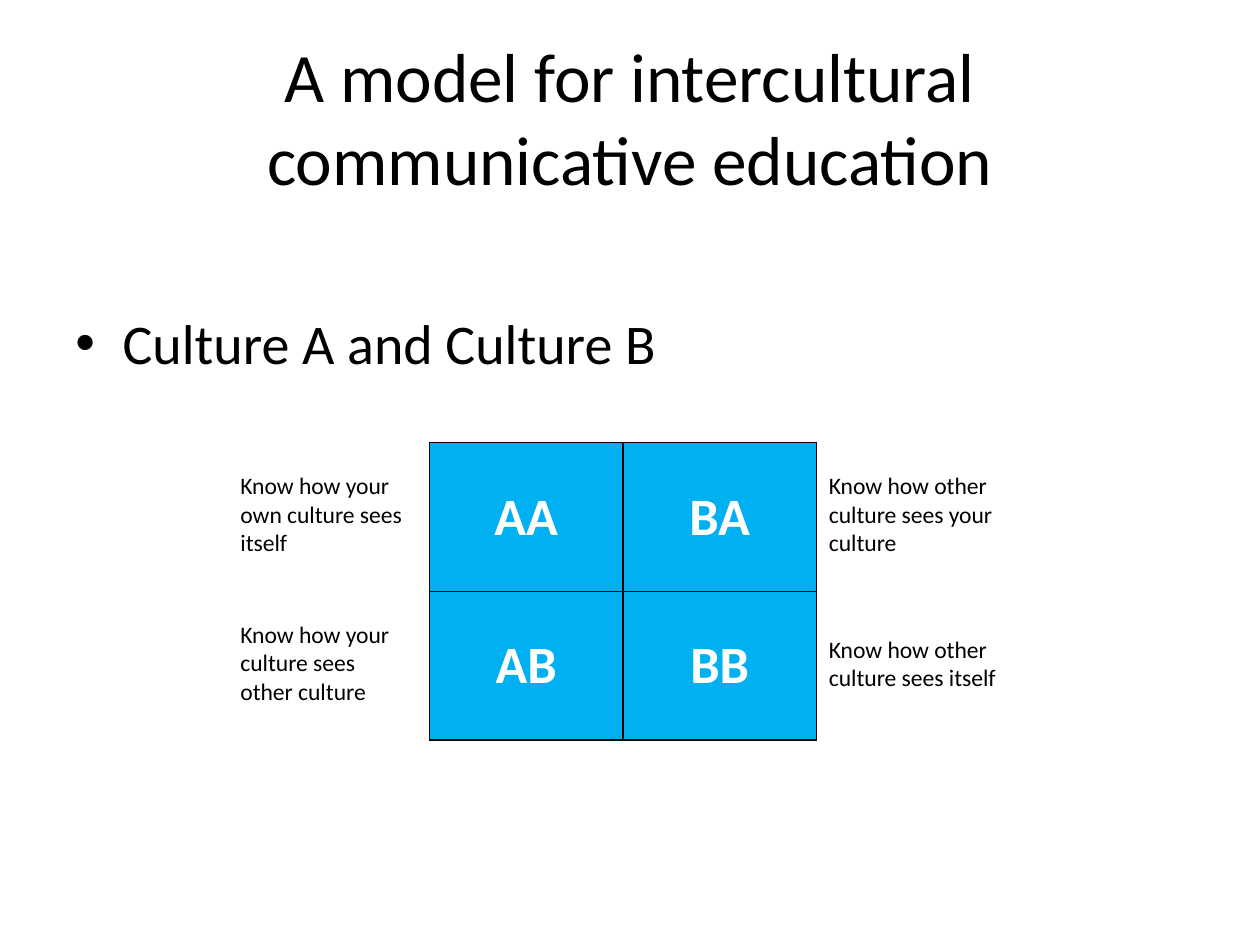
from typing import NamedTuple

from lxml.etree import SubElement
from pptx import Presentation
from pptx.dml.color import RGBColor
from pptx.enum.text import MSO_ANCHOR as Anchor, MSO_AUTO_SIZE as AutoSize, PP_ALIGN as Align
from pptx.oxml.ns import qn
from pptx.util import Pt

BLACK, WHITE, BLUE = "000000", "FFFFFF", "00B0F0"
GRID_LEFT, GRID_TOP = 245.4, 253
CELL_WIDTH, CELL_HEIGHT = 110.6, 85
CAPTION_WIDTH, CAPTION_LINE = 112.3, 16.4
CAPTION_LEFTS = (130.3, GRID_LEFT + 2 * CELL_WIDTH)


class Quadrant(NamedTuple):
    row: int
    column: int
    code: str
    caption: str
    lines: int


QUADRANTS = [
    Quadrant(0, 0, "AA", "Know how your own culture sees itself", 3),
    Quadrant(0, 1, "BA", "Know how other culture sees your culture", 3),
    Quadrant(1, 0, "AB", "Know how your culture sees other culture", 3),
    Quadrant(1, 1, "BB", "Know how other culture sees itself", 2),
]


def color(value: str) -> RGBColor:
    return RGBColor.from_string(value)


def write(frame, text: str, size: float, ink: str = BLACK, bold: bool = False, align=Align.LEFT):
    para = frame.paragraphs[0]
    para.alignment = align
    span = para.add_run()
    span.text = text
    for name, value in {"name": "Calibri", "size": Pt(size), "bold": bold}.items():
        setattr(span.font, name, value)
    span.font.color.rgb = color(ink)
    return para


def place(shape, left: float, top: float, width: float, height: float) -> None:
    bounds = {"left": left, "top": top, "width": width, "height": height}
    for name, value in bounds.items():
        setattr(shape, name, Pt(value))


def add_text_box(page, left: float, top: float, width: float, height: float):
    box = page.shapes.add_textbox(Pt(left), Pt(top), Pt(width), Pt(height))
    box.text_frame.word_wrap = True
    return box.text_frame


def add_title(page, text: str) -> None:
    title = page.shapes.title
    place(title, 36, 21.6, 648, 90)
    frame = title.text_frame
    frame.auto_size = AutoSize.NONE
    frame.vertical_anchor = Anchor.MIDDLE
    write(frame, text, 39.6, align=Align.CENTER)


def add_bullet(page, text: str) -> None:
    frame = add_text_box(page, 36, 126, 648, 356.4)
    frame.margin_top = Pt(50.4)
    properties = write(frame, text, 32)._p.get_or_add_pPr()
    properties.set("marL", str(Pt(27)))
    properties.set("indent", str(-Pt(27)))
    SubElement(properties, qn("a:buFont"), typeface="Arial")
    SubElement(properties, qn("a:buChar"), char="•")


def format_cell(cell, code: str) -> None:
    properties = cell._tc.get_or_add_tcPr()
    for side in ("lnL", "lnR", "lnT", "lnB"):
        line = SubElement(properties, qn(f"a:{side}"), w=str(Pt(1)))
        SubElement(SubElement(line, qn("a:solidFill")), qn("a:srgbClr"), val=BLACK)
    cell.fill.solid()
    cell.fill.fore_color.rgb = color(BLUE)
    cell.vertical_anchor = Anchor.MIDDLE
    write(cell.text_frame, code, 30, WHITE, True, Align.CENTER)


def add_grid(page) -> None:
    table = page.shapes.add_table(
        2, 2, Pt(GRID_LEFT), Pt(GRID_TOP), Pt(2 * CELL_WIDTH), Pt(2 * CELL_HEIGHT)
    ).table
    for quadrant in QUADRANTS:
        format_cell(table.cell(quadrant.row, quadrant.column), quadrant.code)


def add_caption(page, quadrant: Quadrant) -> None:
    height = quadrant.lines * CAPTION_LINE + 7.2
    middle = GRID_TOP + (quadrant.row + 0.5) * CELL_HEIGHT - 1.5
    frame = add_text_box(
        page, CAPTION_LEFTS[quadrant.column], middle - height / 2, CAPTION_WIDTH, height
    )
    frame.auto_size = AutoSize.SHAPE_TO_FIT_TEXT
    write(frame, quadrant.caption, 13.5)


def main() -> None:
    deck = Presentation()
    deck.slide_width, deck.slide_height = Pt(720), Pt(540)
    page = deck.slides.add_slide(deck.slide_layouts.get_by_name("Title Only"))
    add_title(page, "A model for intercultural communicative education")
    add_bullet(page, "Culture A and Culture B")
    add_grid(page)
    for quadrant in QUADRANTS:
        add_caption(page, quadrant)
    deck.save("out.pptx")


if __name__ == "__main__":
    main()
